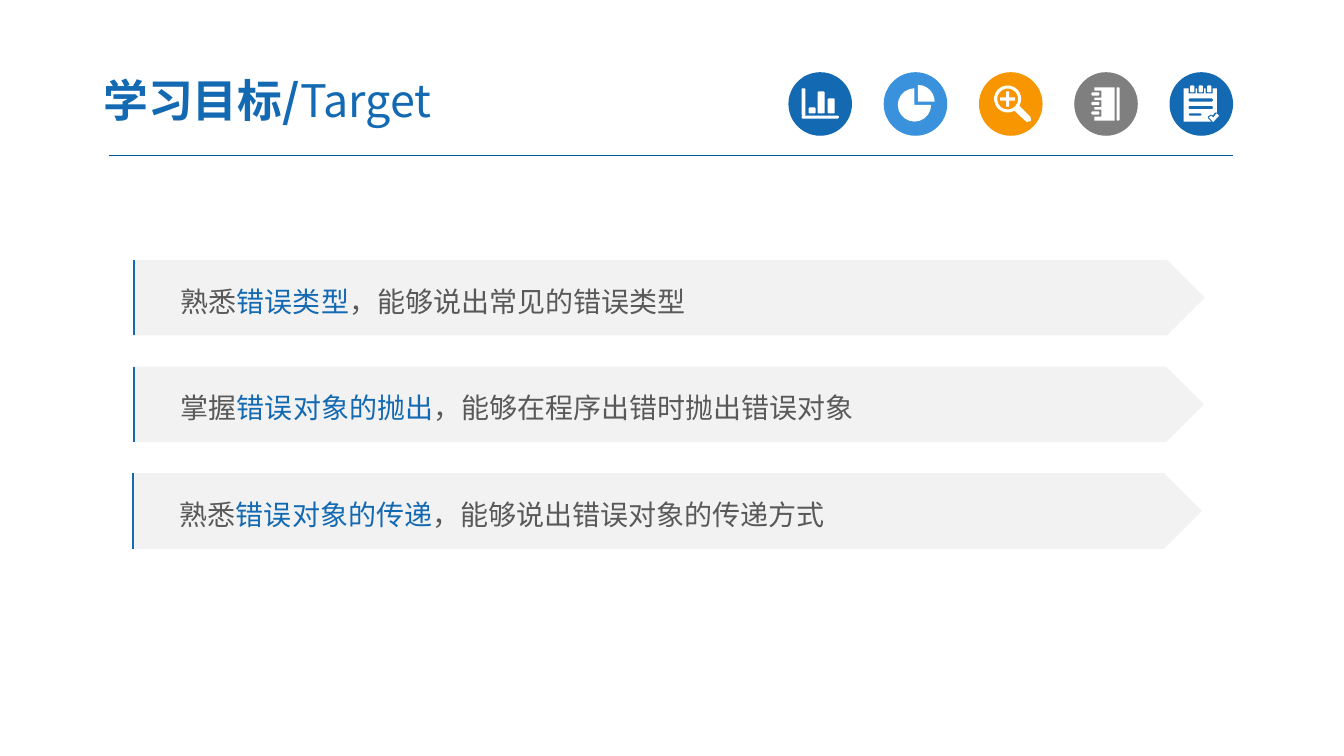
"""Build the learning targets slide with five header icons and three arrow bars."""
from math import cos, radians, sin
from lxml.etree import SubElement
from pptx import Presentation
from pptx.dml.color import RGBColor
from pptx.enum.shapes import MSO_CONNECTOR, MSO_SHAPE
from pptx.enum.text import MSO_ANCHOR, PP_ALIGN
from pptx.oxml.ns import qn
from pptx.util import Pt

FACE = "Noto Sans CJK SC"
BLUE, SKY, GOLD, GREY = "1369B2", "3992DB", "F79600", "7F7F7F"
WHITE, PALE, INK = "FFFFFF", "F2F2F2", "595959"

deck = Presentation()
deck.slide_width, deck.slide_height = Pt(960), Pt(540)
slide = deck.slides.add_slide(deck.slide_layouts[6])
shapes = slide.shapes


def hue(form, code):
    """Colour a fill, line or font."""
    if hasattr(form, "solid"):
        form.solid()
        form.fore_color.rgb = RGBColor.from_string(code)
    else:
        form.color.rgb = RGBColor.from_string(code)


def arc(x, y, size, first, last, steps):
    """List points on a circle from one angle to another."""
    turns = [radians(first + (last - first) * n / steps) for n in range(steps + 1)]
    return [(x + size * cos(t), y + size * sin(t)) for t in turns]


chart = [
    (9.4, 11.5, 12.2, 31),
    (9.4, 31, 36, 33.1),
    (14.4, 25.2, 19.4, 29.5),
    (20.9, 13.7, 25.9, 29.5),
    (28.1, 18.7, 33.1, 29.5),
]
pie = [
    [(22, 23.4)] + arc(22, 23.4, 11.9, 0, 270, 15),
    [(24.5, 21)] + arc(24.5, 21, 11.9, -90, 0, 6),
]
plus = [
    (-1.1, -5.4), (1.1, -5.4), (1.1, -1.1), (5.4, -1.1), (5.4, 1.1), (1.1, 1.1),
    (1.1, 5.4), (-1.1, 5.4), (-1.1, 1.1), (-5.4, 1.1), (-5.4, -1.1), (-1.1, -1.1),
]
lens = [
    arc(20.5, 19.1, 9.7, 60, 390, 18) + [(36.9, 32), (37.2, 34.8), (34, 35.5)],
    arc(20.5, 19.1, 7.5, 0, 345, 16),
    [(20.5 + x, 19.1 + y) for x, y in plus],
]
cover = [(14.4, 10.8), (28.8, 10.8), (28.8, 34.6), (14.4, 34.6)]
sheet = [
    (33.9, 11.5), (33.9, 28.8), (32.3, 28.8), (31.2, 30.7), (29.5, 30.2),
    (27.4, 31.6), (27.4, 32.8), (29.8, 35.3), (10.1, 35.3), (10.1, 11.5),
]
tick = [(28.1, 32.3), (30, 31), (31.2, 32.4), (33.6, 29.4), (35.5, 31), (31.2, 35.5)]
book = [cover, (30.2, 10.8, 32.4, 34.6)]
pad = [sheet, tick, (13.7, 29.4, 23, 31)]
for n in range(3):
    low, far = 31.7 - 6.8 * n, 13.7 + 6.1 * n
    cover += [(14.4, low), (19.4, low), (19.4, low - 5), (14.4, low - 5)]
    sheet += [(far, 11.5), (far, 15.1), (far + 5, 15.1), (far + 5, 11.5)]
    book.append((12.2, low - 3.7, 18, low - 1.4))
    pad.append((far + 1, 9.4, far + 4, 14.4))
for y in (18.7, 24):
    pad.append((13.7, y, 31, y + 2.3))

icons = [(BLUE, chart), (SKY, pie), (GOLD, lens), (GREY, book), (BLUE, pad)]
for n, (code, marks) in enumerate(icons):
    left, top = 563.2 + 68.05 * n, 51.6
    disc = shapes.add_shape(MSO_SHAPE.OVAL, Pt(left), Pt(top), Pt(45.4), Pt(45.4))
    path = None
    for mark in marks:
        if isinstance(mark, tuple):
            a, b, c, d = mark
            mark = [
                (a + 0.6, b), (c - 0.6, b), (c, b + 0.6), (c, d - 0.6),
                (c - 0.6, d), (a + 0.6, d), (a, d - 0.6), (a, b + 0.6),
            ]
        spots = [(Pt(left + x), Pt(top + y)) for x, y in mark]
        path = path.move_to(*spots[0]) if path else shapes.build_freeform(*spots[0])
        path.add_line_segments(spots[1:])
    for shape, tint in ((disc, code), (path.convert_to_shape(), WHITE)):
        shape.shadow.inherit = False
        hue(shape.fill, tint)
        shape.line.fill.background()

rule = shapes.add_connector(MSO_CONNECTOR.STRAIGHT, Pt(77.8), Pt(111.3), Pt(880.6), Pt(111.3))
hue(rule.line, "005B9E")
rule.line.width = Pt(0.75)
SubElement(rule._element.spPr, qn("a:effectLst"))

title = shapes.add_textbox(Pt(64.1), Pt(45.4), Pt(375.8), Pt(51.8))
texts = [(title, 9.7, 32, 1, 6.4, [("学习目标/", BLUE, True), ("Target", BLUE, False)])]

goals = [
    (95.2, "熟悉", "错误类型", "，能够说出常见的错误类型"),
    (95.2, "掌握", "错误对象的抛出", "，能够在程序出错时抛出错误对象"),
    (94.5, "熟悉", "错误对象的传递", "，能够说出错误对象的传递方式"),
]
for n, (left, verb, topic, rest) in enumerate(goals):
    top, edge = 185.6 + 76.2 * n, left + 0.6
    size = Pt(765.4 - 0.7 * n), Pt(54)
    plate = shapes.add_shape(MSO_SHAPE.PENTAGON, Pt(left), Pt(top), *size)
    plate.shadow.inherit = False
    hue(plate.fill, PALE)
    plate.line.fill.background()
    runs = [(verb, INK, False), (topic, BLUE, False), (rest, INK, False)]
    texts.append((plate, 34, 20, 1.2, 0, runs))
    path = shapes.build_freeform(Pt(edge + 11.5), Pt(top))
    path.move_to(Pt(edge), Pt(top + 54))
    path.add_line_segments([(Pt(edge), Pt(top))], close=False)
    stripe = path.convert_to_shape()
    stripe.shadow.inherit = False
    stripe.fill.background()
    hue(stripe.line, BLUE)
    stripe.line.width = Pt(1.5)

for shape, inset, size, lead, gap, runs in texts:
    frame = shape.text_frame
    frame.word_wrap = True
    frame.vertical_anchor = MSO_ANCHOR.MIDDLE
    frame.margin_left = Pt(inset)
    para = frame.paragraphs[0]
    para.alignment = PP_ALIGN.LEFT
    para.line_spacing = lead
    para.space_before = Pt(gap)
    para.font.size = Pt(size)
    para.font.name = FACE
    SubElement(para.font._element, qn("a:ea"), typeface=FACE)
    for words, code, bold in runs:
        run = para.add_run()
        run.text = words
        run.font.bold = bold
        hue(run.font, code)

deck.save("out.pptx")
